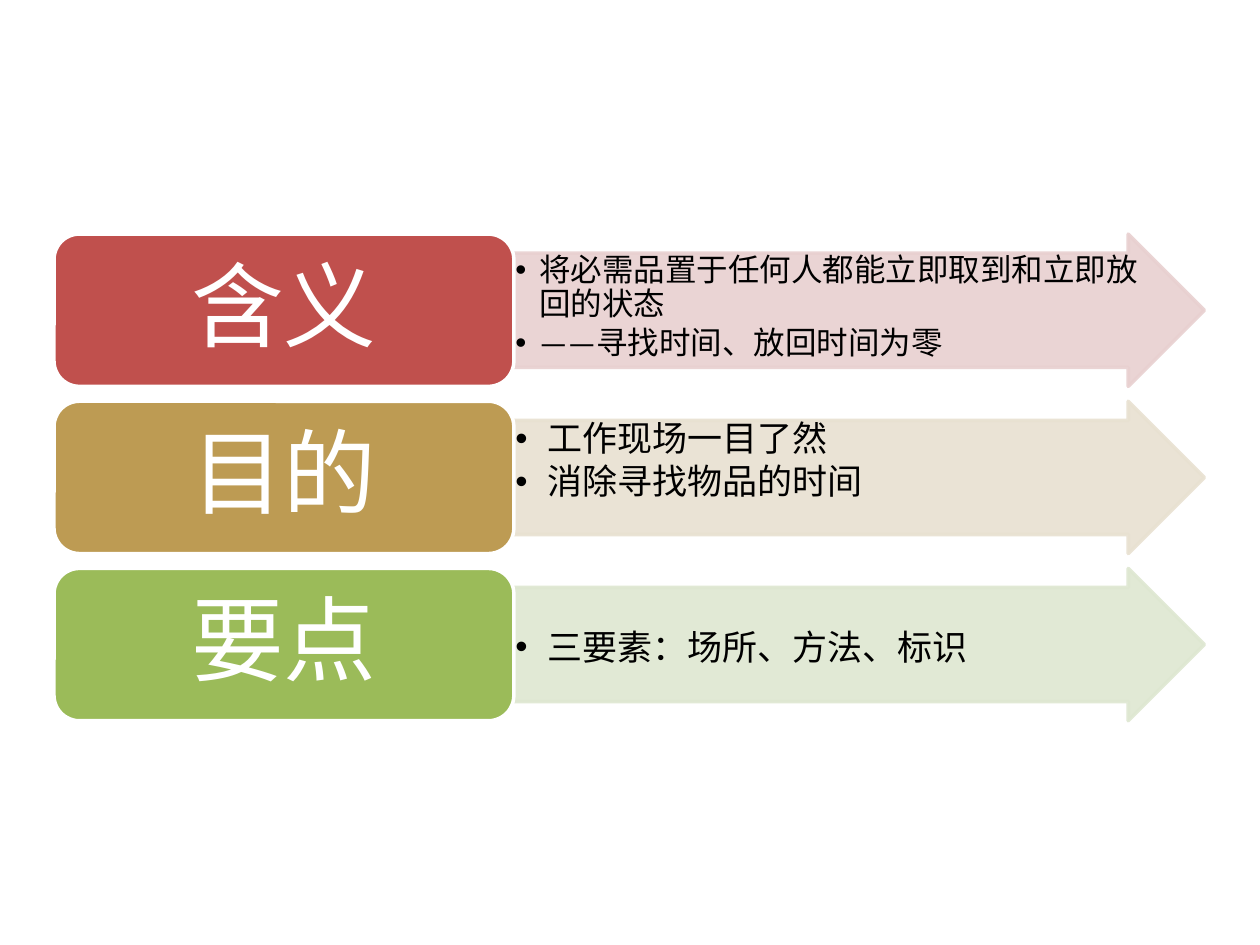
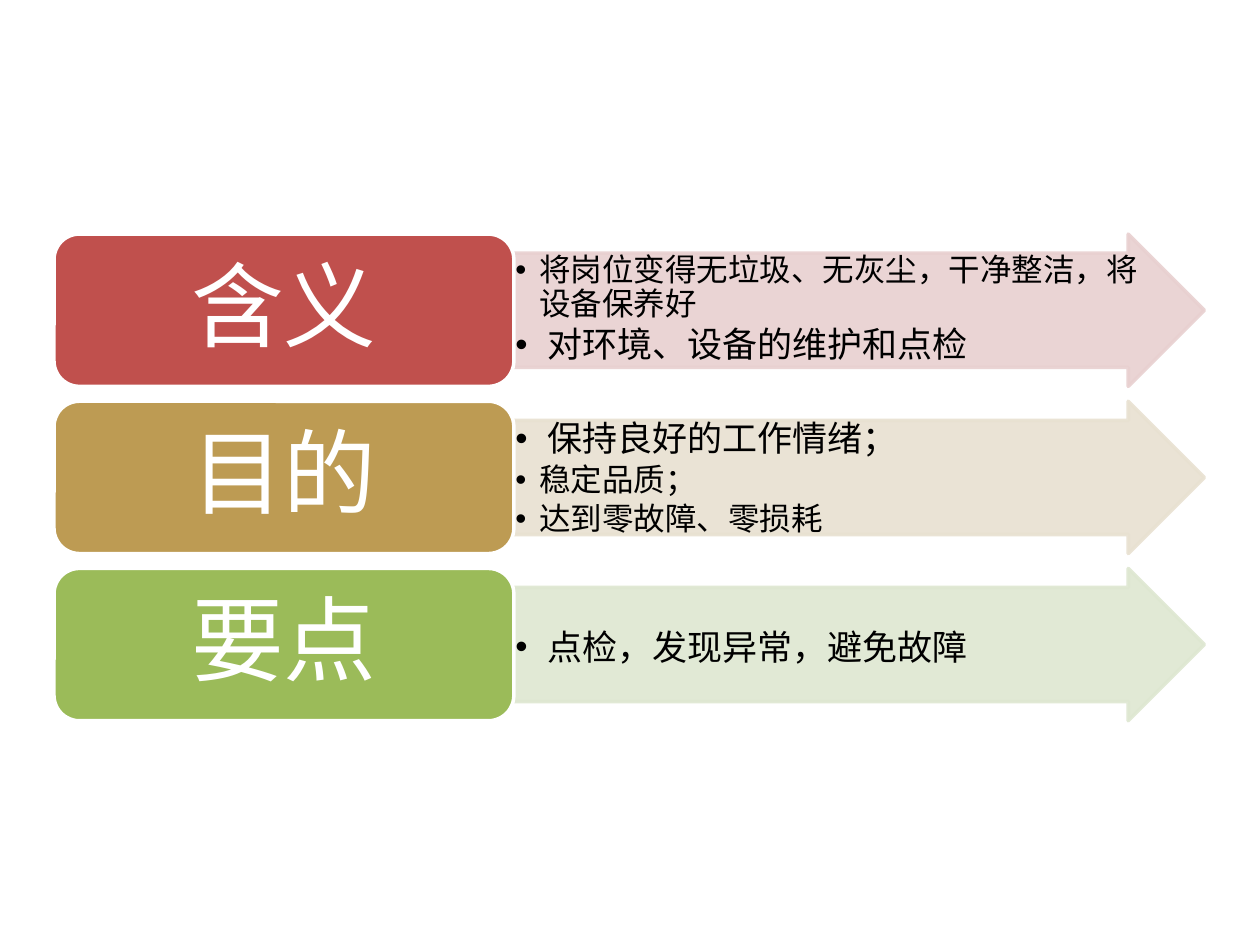
from lxml.etree import SubElement
from pptx import Presentation
from pptx.dml.color import RGBColor
from pptx.enum.shapes import MSO_SHAPE
from pptx.enum.text import MSO_ANCHOR, PP_ALIGN
from pptx.oxml.ns import qn
from pptx.util import Cm, Pt

# Shared colours and font
WHITE = RGBColor(0xFF, 0xFF, 0xFF)
BLACK = RGBColor(0x00, 0x00, 0x00)
RED = RGBColor(0xC0, 0x50, 0x4D)
GOLD = RGBColor(0xBD, 0x9B, 0x53)
GREEN = RGBColor(0x9B, 0xBB, 0x59)
PINK = RGBColor(0xE8, 0xD0, 0xD0)
SAND = RGBColor(0xE8, 0xE1, 0xD1)
MINT = RGBColor(0xDE, 0xE7, 0xD1)
FONT = "Calibri"

# Shared grid, in cm
LEFT, MID, TOP = 1.09, 10.36, 4.72
HIGH, STEP = 3.07, 3.37

# Shared formats
FRAME = {"word_wrap": True, "margin_left": Cm(0.03), "margin_right": Cm(0.03),
         "margin_bottom": Cm(0.03), "vertical_anchor": MSO_ANCHOR.TOP}
LABEL = {"word_wrap": True, "margin_left": Cm(0.56), "margin_right": Cm(0.56),
         "margin_top": Cm(0.28), "margin_bottom": Cm(0.28),
         "vertical_anchor": MSO_ANCHOR.MIDDLE}

# Row label, dark colour, pale colour, top margin of the bullets
ROWS = [("含义", RED, PINK, 0.03),
        ("目的", GOLD, SAND, 0.03),
        ("要点", GREEN, MINT, 0.98)]

# Bullets of each slide, row by row, with text size
SLIDES = [
    [[("将必需品置于任何人都能立即取到和立即放回的状态", 18),
      ("——寻找时间、放回时间为零", 18)],
     [("工作现场一目了然", 20), ("消除寻找物品的时间", 20)],
     [("三要素：场所、方法、标识", 20)]],
    [[("将岗位变得无垃圾、无灰尘，干净整洁，将设备保养好", 18),
      ("对环境、设备的维护和点检", 20)],
     [("保持良好的工作情绪；", 20), ("稳定品质；", 18),
      ("达到零故障、零损耗", 18)],
     [("点检，发现异常，避免故障", 20)]],
]


def block(kind, left, top, width, fill, edge):
    shape = slide.shapes.add_shape(kind, Cm(left), Cm(top), Cm(width), Cm(HIGH))
    shape.shadow.inherit = False
    shape.fill.solid()
    shape.fill.fore_color.rgb = fill
    shape.line.color.rgb = edge
    shape.line.width = Pt(2)
    return shape


def write(para, text, size, color, align):
    run = para.add_run()
    run.text = text
    for name, value in {"name": FONT, "size": Pt(size)}.items():
        setattr(run.font, name, value)
    run.font.color.rgb = color
    SubElement(run.font._element, qn("a:ea"), typeface=FONT)
    para.alignment = align
    para.line_spacing = 0.9
    para.space_after = Pt(size * 0.15)


deck = Presentation()
deck.slide_width, deck.slide_height = Cm(25.4), Cm(19.05)

for lists in SLIDES:
    slide = deck.slides.add_slide(deck.slide_layouts[6])
    for row, ((name, dark, pale, gap), items) in enumerate(zip(ROWS, lists)):
        top = TOP + row * STEP

        # Pale arrow, slightly see-through
        arrow = block(MSO_SHAPE.RIGHT_ARROW, MID, top, 13.92, pale, pale)
        arrow.adjustments[0], arrow.adjustments[1] = 0.75, 0.5
        for tint in arrow._element.spPr.iter(qn("a:srgbClr")):
            SubElement(tint, qn("a:alpha"), val="90000")

        # Bullets on the arrow
        box = slide.shapes.add_textbox(Cm(MID), Cm(top + 0.38), Cm(12.75), Cm(2.29))
        frame = box.text_frame
        for key, value in FRAME.items():
            setattr(frame, key, value)
        frame.margin_top = Cm(gap)
        for num, (text, size) in enumerate(items):
            para = frame.add_paragraph() if num else frame.paragraphs[0]
            write(para, text, size, BLACK, PP_ALIGN.LEFT)
            para.level = 1
            props = para._p.get_or_add_pPr()
            dent = Cm(0.48 if size == 18 else 0.64)
            props.set("marL", str(dent))
            props.set("indent", str(-dent))
            SubElement(props, qn("a:buFont"), typeface="Arial")
            SubElement(props, qn("a:buChar"), char="•")

        # Dark label
        label = block(MSO_SHAPE.ROUNDED_RECTANGLE, LEFT, top, MID - LEFT, dark, WHITE)
        for key, value in LABEL.items():
            setattr(label.text_frame, key, value)
        write(label.text_frame.paragraphs[0], name, 53, WHITE, PP_ALIGN.CENTER)
        label.text_frame.paragraphs[0].space_after = Pt(0)

deck.save("out.pptx")
